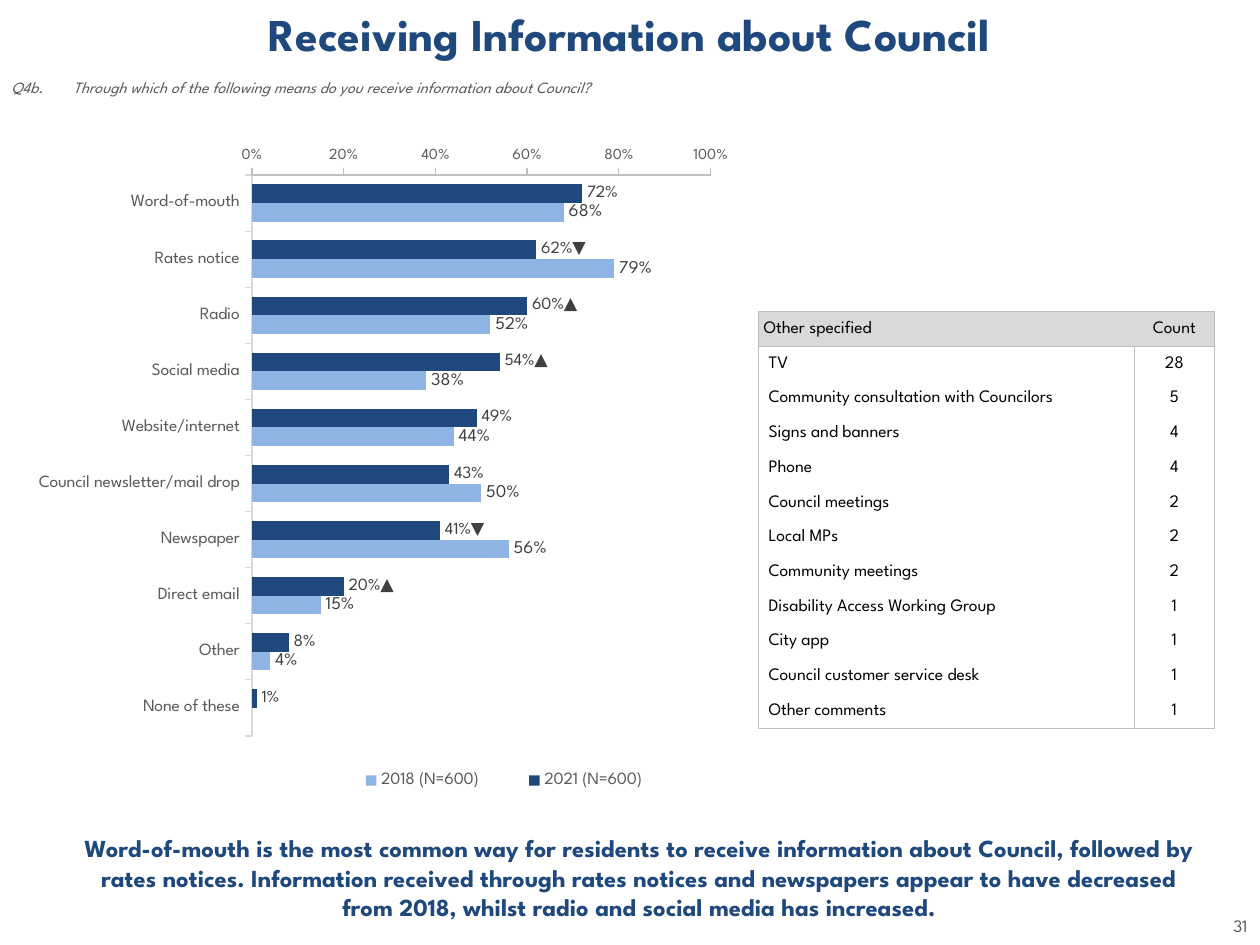
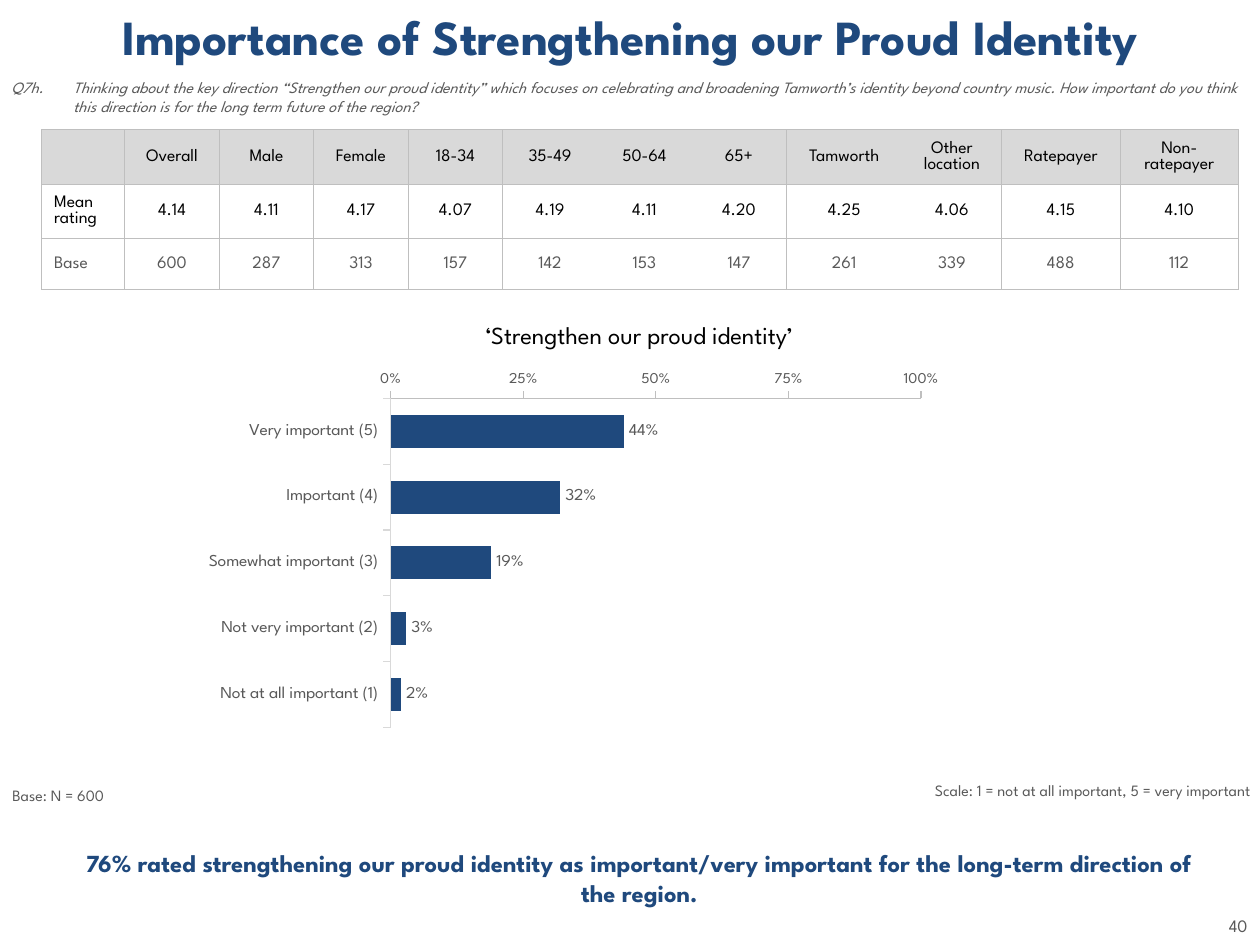
import pptx
import pptx.chart.data
import pptx.dml.color
import pptx.enum.chart
import pptx.enum.text
import pptx.oxml.ns
import pptx.util
from lxml import etree

RGBColor = pptx.dml.color.RGBColor
Inches = pptx.util.Inches
Pt = pptx.util.Pt
ALIGN = pptx.enum.text.PP_ALIGN
ANCHOR = pptx.enum.text.MSO_ANCHOR
qn = pptx.oxml.ns.qn

NAVY = RGBColor(0x1F, 0x49, 0x7D)
SKY = RGBColor(0x8E, 0xB4, 0xE3)
BLACK = RGBColor(0x00, 0x00, 0x00)
DARK_GREY = RGBColor(0x40, 0x40, 0x40)
TEXT_GREY = RGBColor(0x59, 0x59, 0x59)
RULE_GREY = RGBColor(0xBF, 0xBF, 0xBF)
PALE_GREY = RGBColor(0xD9, 0xD9, 0xD9)
FONT = "League Spartan"
PLAIN_TABLE_STYLE = "{2D5ABB26-0587-4C30-8999-92F81FD0307C}"
HANGING = 0.49


def style_font(font, size, color, bold=False, italic=False):
    font.name = FONT
    font.size = Pt(size)
    font.color.rgb = color
    font.bold = bold
    font.italic = italic


def write(shape, box, text, size, color, align=ALIGN.LEFT, anchor=ANCHOR.TOP,
          hanging=0, space_before=0, bold=False, italic=False):
    """Place a text box or placeholder and fill it with one unbulleted paragraph."""
    shape.left, shape.top, shape.width, shape.height = map(Inches, box)
    frame = shape.text_frame
    frame.word_wrap = True
    frame.auto_size = pptx.enum.text.MSO_AUTO_SIZE.NONE
    frame.vertical_anchor = anchor
    frame.text = text
    paragraph = frame.paragraphs[0]
    paragraph.alignment = align
    paragraph.space_before = Pt(space_before)
    properties = paragraph._p.get_or_add_pPr()
    properties.set("marL", str(Inches(hanging)))
    properties.set("indent", str(-Inches(hanging)))
    etree.SubElement(properties, qn("a:buNone"))
    style_font(paragraph.font, size, color, bold, italic)


def add_note(slide, box, text, size, color, **options):
    write(slide.shapes.add_textbox(0, 0, 0, 0), box, text, size, color, **options)


def add_survey_slide(deck, title, title_size, question, question_height, takeaway, number):
    """Add a slide with the title, question line, takeaway and page number."""
    slide = deck.slides.add_slide(deck.slide_layouts.get_by_name("Two Content"))
    title_holder, question_holder, takeaway_holder = slide.placeholders
    write(title_holder, (0, 0, 10, 0.55), title, title_size, NAVY, ALIGN.CENTER,
          space_before=title_size / 5, bold=True)
    write(question_holder, (-0.01, 0.57, 10, question_height), question, 9, TEXT_GREY,
          anchor=ANCHOR.MIDDLE, hanging=HANGING, space_before=1.8, italic=True)
    write(takeaway_holder, (0.51, 6.43, 9.13, 1.07), takeaway, 14, NAVY, ALIGN.CENTER,
          ANCHOR.MIDDLE, space_before=2.8, bold=True)
    add_note(slide, (9.57, 7.21, 0.43, 0.27), number, 10, TEXT_GREY, align=ALIGN.RIGHT)
    return slide


def set_layout(part, position, frame, area, inner=False):
    """Fix a chart part to an area given in slide inches."""
    for old in part.findall(qn("c:layout")):
        part.remove(old)
    layout = etree.Element(qn("c:layout"))
    manual = etree.SubElement(layout, qn("c:manualLayout"))
    settings = [("layoutTarget", "inner")] if inner else []
    settings += [("xMode", "edge"), ("yMode", "edge")]
    settings += [("x", (area[0] - frame[0]) / frame[2]), ("y", (area[1] - frame[1]) / frame[3]),
                 ("w", area[2] / frame[2]), ("h", area[3] / frame[3])]
    for tag, value in settings:
        etree.SubElement(manual, qn("c:" + tag)).set("val", str(value))
    part.insert(position, layout)


def format_axis(axis, size, line_color):
    axis.has_major_gridlines = False
    axis.major_tick_mark = pptx.enum.chart.XL_TICK_MARK.OUTSIDE
    axis.minor_tick_mark = pptx.enum.chart.XL_TICK_MARK.NONE
    axis.format.line.color.rgb = line_color
    axis.format.line.width = Pt(0.75)
    style_font(axis.tick_labels.font, size, TEXT_GREY)


def format_series(series, color, label_size, label_color, marked):
    """Colour a series and label it; marked maps a bar's index to its own label."""
    outside = pptx.enum.chart.XL_LABEL_POSITION.OUTSIDE_END
    series.format.fill.solid()
    series.format.fill.fore_color.rgb = color
    series.invert_if_negative = False
    labels = series.data_labels
    labels.show_value = True
    labels.number_format = "0%"
    labels.number_format_is_linked = False
    labels.position = outside
    style_font(labels.font, label_size, label_color)
    for index, text in marked.items():
        label = series.points[index].data_label
        run = label.text_frame.paragraphs[0].add_run()
        run.text = text
        style_font(run.font, label_size, label_color)
        label.position = outside


def add_bar_chart(slide, frame, plot_area, categories, series_list, step, legend_area=None):
    """series_list holds (name, values, colour, label size, label colour, marked labels)."""
    data = pptx.chart.data.CategoryChartData(number_format="0%")
    data.categories = categories
    for name, values, *_ in series_list:
        data.add_series(name, values)
    chart = slide.shapes.add_chart(pptx.enum.chart.XL_CHART_TYPE.BAR_CLUSTERED,
                                   *map(Inches, frame), data).chart
    chart.has_title = False
    style_font(chart.font, 10, TEXT_GREY)

    format_axis(chart.category_axis, 10, PALE_GREY)
    chart.category_axis.reverse_order = True
    chart.category_axis.crosses = pptx.enum.chart.XL_AXIS_CROSSES.MAXIMUM
    scale = chart.value_axis
    format_axis(scale, 9, RULE_GREY)
    scale.minimum_scale, scale.maximum_scale, scale.major_unit = 0, 1, step
    scale.tick_labels.number_format = "0%"
    scale.tick_labels.number_format_is_linked = False

    bars = chart.plots[0]
    bars.gap_width = 100
    bars.vary_by_categories = False
    for series, (_, _, *look) in zip(bars.series, series_list):
        format_series(series, *look)
    set_layout(chart._chartSpace.chart.plotArea, 0, frame, plot_area, inner=True)

    chart.has_legend = legend_area is not None
    if legend_area:
        legend = chart.legend
        legend.position = pptx.enum.chart.XL_LEGEND_POSITION.BOTTOM
        legend.include_in_layout = False
        style_font(legend.font, 10, TEXT_GREY)
        set_layout(legend._element, 1, frame, legend_area)


def set_borders(cell, sides):
    """Draw thin grey lines on the named sides (L, R, T, B) and none on the others."""
    properties = cell._tc.get_or_add_tcPr()
    for position, side in enumerate("LRTB"):
        line = etree.Element(qn("a:ln" + side), w=str(Pt(0.5)))
        if side in sides:
            fill = etree.SubElement(line, qn("a:solidFill"))
            etree.SubElement(fill, qn("a:srgbClr"), val=str(RULE_GREY))
        else:
            etree.SubElement(line, qn("a:noFill"))
        properties.insert(position, line)


def add_ruled_table(slide, corner, widths, heights, rows, header_walls, body_walls, floors,
                    margins, centred_header=False, grey_rows=()):
    """Walls and floors number the column and row boundaries that carry a line.

    margins holds the left insets of the first header cell, the first body
    column and the other columns, then the top and bottom insets.
    """
    left, top = corner
    table = slide.shapes.add_table(len(rows), len(widths), Inches(left), Inches(top),
                                   Inches(sum(widths)), Inches(sum(heights))).table
    table.first_row = table.horz_banding = False
    table._tbl.tblPr.find(qn("a:tableStyleId")).text = PLAIN_TABLE_STYLE
    for column, width in zip(table.columns, widths):
        column.width = Inches(width)
    head_inset, label_inset, inset, top_inset, bottom_inset = margins
    for r, (row, height) in enumerate(zip(rows, heights)):
        table.rows[r].height = Inches(height)
        walls = body_walls if r else header_walls
        for c, text in enumerate(row):
            cell = table.cell(r, c)
            cell.text = text
            cell.vertical_anchor = ANCHOR.MIDDLE
            cell.margin_left = Inches(inset if c else label_inset if r else head_inset)
            cell.margin_right = Inches(inset)
            cell.margin_top, cell.margin_bottom = Inches(top_inset), Inches(bottom_inset)
            paragraph = cell.text_frame.paragraphs[0]
            paragraph.alignment = ALIGN.CENTER if c else ALIGN.LEFT
            style_font(paragraph.font, 10, TEXT_GREY if r in grey_rows else BLACK)
            if r:
                cell.fill.background()
            else:
                cell.fill.solid()
                cell.fill.fore_color.rgb = PALE_GREY
            drawn = {"L": c in walls, "R": c + 1 in walls, "T": r in floors, "B": r + 1 in floors}
            set_borders(cell, [side for side, shown in drawn.items() if shown])


def build_information_slide(deck):
    slide = add_survey_slide(
        deck, "Receiving Information about Council", 26,
        "Q4b.\tThrough which of the following means do you receive information about Council?", 0.24,
        "Word-of-mouth is the most common way for residents to receive information about Council, "
        "followed by rates notices. Information received through rates notices and newspapers appear "
        "to have decreased from 2018, whilst radio and social media has increased.", "31")
    means = ["Word-of-mouth", "Rates notice", "Radio", "Social media", "Website/internet",
             "Council newsletter/mail drop", "Newspaper", "Direct email", "Other", "None of these"]
    changes = {1: "62%▼", 2: "60%▲", 3: "54%▲", 6: "41%▼", 7: "20%▲"}
    add_bar_chart(
        slide, (0.2, 1.18, 5.7, 5.25), (2, 1.29, 3.64, 4.54), means,
        [("2021 (N=600)", [0.72, 0.62, 0.6, 0.54, 0.49, 0.43, 0.41, 0.2, 0.08, 0.01],
          NAVY, 10, DARK_GREY, changes),
         ("2018 (N=600)", [0.68, 0.79, 0.52, 0.38, 0.44, 0.5, 0.56, 0.15, 0.04, None],
          SKY, 10.5, DARK_GREY, {})],
        0.2, legend_area=(2.55, 6.04, 2.9, 0.3))
    others = [("Other specified", "Count"), ("TV", "28"),
              ("Community consultation with Councilors", "5"), ("Signs and banners", "4"),
              ("Phone", "4"), ("Council meetings", "2"), ("Local MPs", "2"),
              ("Community meetings", "2"), ("Disability Access Working Group", "1"),
              ("City app", "1"), ("Council customer service desk", "1"), ("Other comments", "1")]
    add_ruled_table(slide, (6.02, 2.47), [2.98, 0.64], [3.31 / len(others)] * len(others), others,
                    header_walls={0, 2}, body_walls={0, 1, 2}, floors={0, 1, len(others)},
                    margins=(0.04, 0.08, 0.01, 0.01, 0))


def build_identity_slide(deck):
    slide = add_survey_slide(
        deck, "Importance of Strengthening our Proud Identity", 28,
        "Q7h.\tThinking about the key direction “Strengthen our proud identity” which focuses on "
        "celebrating and broadening Tamworth’s identity beyond country music. How important do you "
        "think this direction is for the long term future of the region?", 0.4,
        "76% rated strengthening our proud identity as important/very important for the long-term "
        "direction of the region.", "40")
    add_note(slide, (0, 6.19, 9.88, 0.23), "Base: N = 600", 9, TEXT_GREY, space_before=1.8)
    add_note(slide, (5.65, 6.15, 4.37, 0.25), "Scale: 1 = not at all important, 5 = very important",
             9, TEXT_GREY, align=ALIGN.RIGHT)
    add_bar_chart(
        slide, (1.54, 2.96, 6.03, 3.07), (3.1, 3.02, 4.21, 2.74),
        ["Very important (5)", "Important (4)", "Somewhat important (3)",
         "Not very important (2)", "Not at all important (1)"],
        [("Series 1", [0.44, 0.32, 0.19, 0.03, 0.02], NAVY, 10, TEXT_GREY, {})], 0.25)
    ratings = [
        ["", "Overall", "Male", "Female", "18-34", "35-49", "50-64", "65+", "Tamworth",
         "Other location", "Ratepayer", "Non-ratepayer"],
        ["Mean rating", "4.14", "4.11", "4.17", "4.07", "4.19", "4.11", "4.20", "4.25", "4.06",
         "4.15", "4.10"],
        ["Base", "600", "287", "313", "157", "142", "153", "147", "261", "339", "488", "112"]]
    group_walls = {0, 1, 2, 3, 4, 5, 8, 10, 11, 12}
    add_ruled_table(slide, (0.33, 1.03), [0.66] + [0.75] * 7 + [0.92, 0.79, 0.94, 0.94],
                    [0.43, 0.43, 0.41], ratings, group_walls, group_walls, floors={0, 1, 2, 3},
                    margins=(0.1, 0.1, 0.1, 0.05, 0.05), grey_rows={2})
    add_note(slide, (2.32, 2.49, 5.51, 0.34), "‘Strengthen our proud identity’", 14, BLACK,
             align=ALIGN.CENTER)


def main():
    deck = pptx.Presentation()
    deck.slide_width, deck.slide_height = Inches(10), Inches(7.5)
    build_information_slide(deck)
    build_identity_slide(deck)
    deck.save("out.pptx")


if __name__ == "__main__":
    main()
